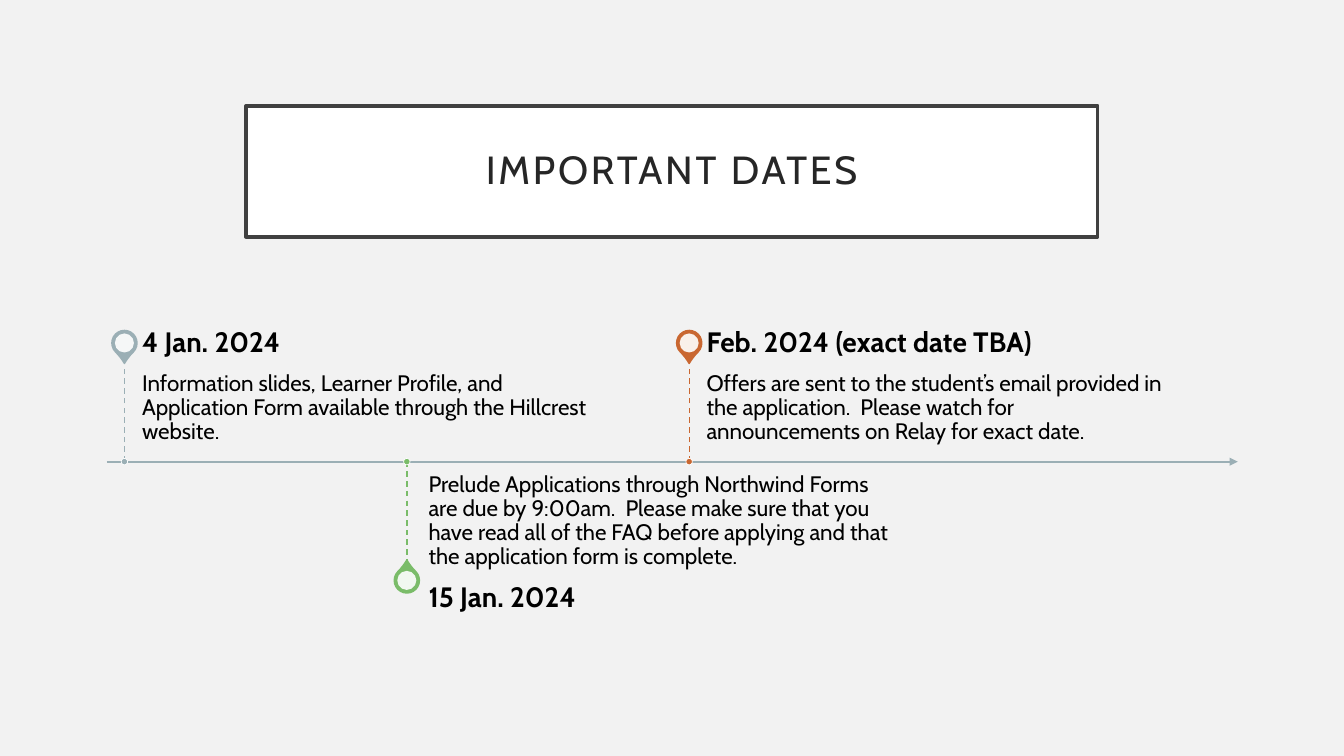
from lxml.etree import SubElement
from pptx import Presentation
from pptx.dml.color import RGBColor
from pptx.enum.dml import MSO_LINE
from pptx.enum.shapes import MSO_CONNECTOR, MSO_SHAPE
from pptx.enum.text import MSO_ANCHOR, PP_ALIGN
from pptx.oxml.ns import qn
from pptx.util import Pt

FONT = "Cabin"
AXIS_Y = 329.8
FIRST_X, DATE_STEP = 88.9, 201.7
PIN_DISTANCE, STEM_LENGTH = 84.8, 72.2
PIN_SIZE, HOLE_SIZE, DOT_SIZE = 18, 13.6, 4.6
TEXT_WIDTH, BODY_HEIGHT, HEADING_HEIGHT = 335.5, 72.7, 25.2

# Heading, body, colour, side of the axis (-1 above, 1 below), text indent
DATES = [
    ("4 Jan. 2024",
     "Information slides, Learner Profile, and Application Form available "
     "through the Hillcrest website.", "9BAFB5", -1, 12.6),
    ("15 Jan. 2024",
     "Prelude Applications through Northwind Forms are due by 9:00am.  Please "
     "make sure that you have read all of the FAQ before applying and that "
     "the application form is complete.", "7ABC69", 1, 15.5),
    ("Feb. 2024 (exact date TBA)",
     "Offers are sent to the student’s email provided in the application.  "
     "Please watch for announcements on Relay for exact date.",
     "C96731", -1, 12.4),
]


def color(value):
    return RGBColor.from_string(value)


def set_attributes(target, values):
    for name, value in values.items():
        setattr(target, name, value)


def add_shape(slide, kind, left, top, width, height, fill, line=None, weight=1):
    shape = slide.shapes.add_shape(kind, Pt(left), Pt(top), Pt(width), Pt(height))
    shape.shadow.inherit = False
    shape.fill.solid()
    shape.fill.fore_color.rgb = color(fill)
    if line:
        shape.line.color.rgb = color(line)
        shape.line.width = Pt(weight)
    else:
        shape.line.fill.background()
    return shape


def add_centered(slide, kind, x, y, size, fill, line=None, weight=1):
    return add_shape(slide, kind, x - size / 2, y - size / 2, size, size,
                     fill, line, weight)


def add_line(slide, start, end, line_color, weight):
    points = [Pt(value) for value in (*start, *end)]
    connector = slide.shapes.add_connector(MSO_CONNECTOR.STRAIGHT, *points)
    connector.line.color.rgb = color(line_color)
    connector.line.width = Pt(weight)
    SubElement(connector._element.spPr, qn("a:effectLst"))
    return connector


def write_text(shape, text, margins, anchor, size, bold=False,
               text_color="000000", align=PP_ALIGN.LEFT):
    left, top, right, bottom = [Pt(margin) for margin in margins]
    frame = shape.text_frame
    set_attributes(frame, {
        "word_wrap": True, "vertical_anchor": anchor,
        "margin_left": left, "margin_top": top,
        "margin_right": right, "margin_bottom": bottom,
    })
    paragraph = frame.paragraphs[0]
    set_attributes(paragraph, {"alignment": align, "line_spacing": 0.9})
    run = paragraph.add_run()
    run.text = text
    set_attributes(run.font, {"name": FONT, "size": Pt(size), "bold": bold})
    run.font.color.rgb = color(text_color)
    return run


def add_title(slide):
    box = add_shape(slide, MSO_SHAPE.RECTANGLE, 175.7, 75.6, 608.4, 93.6,
                    "FFFFFF", "404040", 2.5)
    run = write_text(box, "IMPORTANT DATES", (14.4,) * 4, MSO_ANCHOR.MIDDLE,
                     28, text_color="262626", align=PP_ALIGN.CENTER)
    run.font._element.set("spc", "200")


def add_axis(slide):
    axis = add_line(slide, (76.3, AXIS_Y), (884.2, AXIS_Y), "9BAFB5", 1.5)
    SubElement(axis.line._get_or_add_ln(), qn("a:tailEnd"), type="triangle")


def add_pin(slide, x, y, pin_color, side):
    pin = add_centered(slide, MSO_SHAPE.TEAR, x, y, PIN_SIZE, pin_color, pin_color)
    pin.adjustments[0] = 1.15
    pin.rotation = 135 if side < 0 else 315
    hole = add_centered(slide, MSO_SHAPE.OVAL, x, y, HOLE_SIZE, "FFFFFF")
    fill_color = hole._element.spPr.find(qn("a:solidFill"))[0]
    SubElement(fill_color, qn("a:alpha"), val="90000")


def add_date(slide, x, heading, body, date_color, side, indent):
    add_pin(slide, x, AXIS_Y + side * PIN_DISTANCE, date_color, side)

    # Texts: the heading is always on the far side of the body
    if side < 0:
        body_top = AXIS_Y - STEM_LENGTH
        heading_top = body_top - HEADING_HEIGHT
        margins, anchor = (0, 7.9, 7.9, 12.2), MSO_ANCHOR.TOP
    else:
        body_top = AXIS_Y + 12.2
        heading_top = body_top + BODY_HEIGHT
        margins, anchor = (0, 12.2, 0, 7.9), MSO_ANCHOR.BOTTOM
    for text, top, height, inset, position, size, bold in (
        (body, body_top, BODY_HEIGHT, margins, anchor, 16, False),
        (heading, heading_top, HEADING_HEIGHT, (0, 0, 10, 0),
         MSO_ANCHOR.MIDDLE, 20, True),
    ):
        box = slide.shapes.add_textbox(Pt(x + indent), Pt(top),
                                       Pt(TEXT_WIDTH), Pt(height))
        write_text(box, text, inset, position, size, bold)

    # Stem and dot on the axis
    stem = add_line(slide, (x, AXIS_Y), (x, AXIS_Y + side * STEM_LENGTH),
                    date_color, 1)
    stem.line.dash_style = MSO_LINE.DASH
    add_centered(slide, MSO_SHAPE.OVAL, x, AXIS_Y, DOT_SIZE, date_color,
                 "FFFFFF", 0.5)


def main():
    presentation = Presentation()
    presentation.slide_width, presentation.slide_height = Pt(960), Pt(540)
    slide = presentation.slides.add_slide(presentation.slide_layouts[6])
    slide.background.fill.solid()
    slide.background.fill.fore_color.rgb = color("F2F2F2")
    add_title(slide)
    add_axis(slide)
    for index, date in enumerate(DATES):
        add_date(slide, FIRST_X + index * DATE_STEP, *date)
    presentation.save("out.pptx")


if __name__ == "__main__":
    main()
